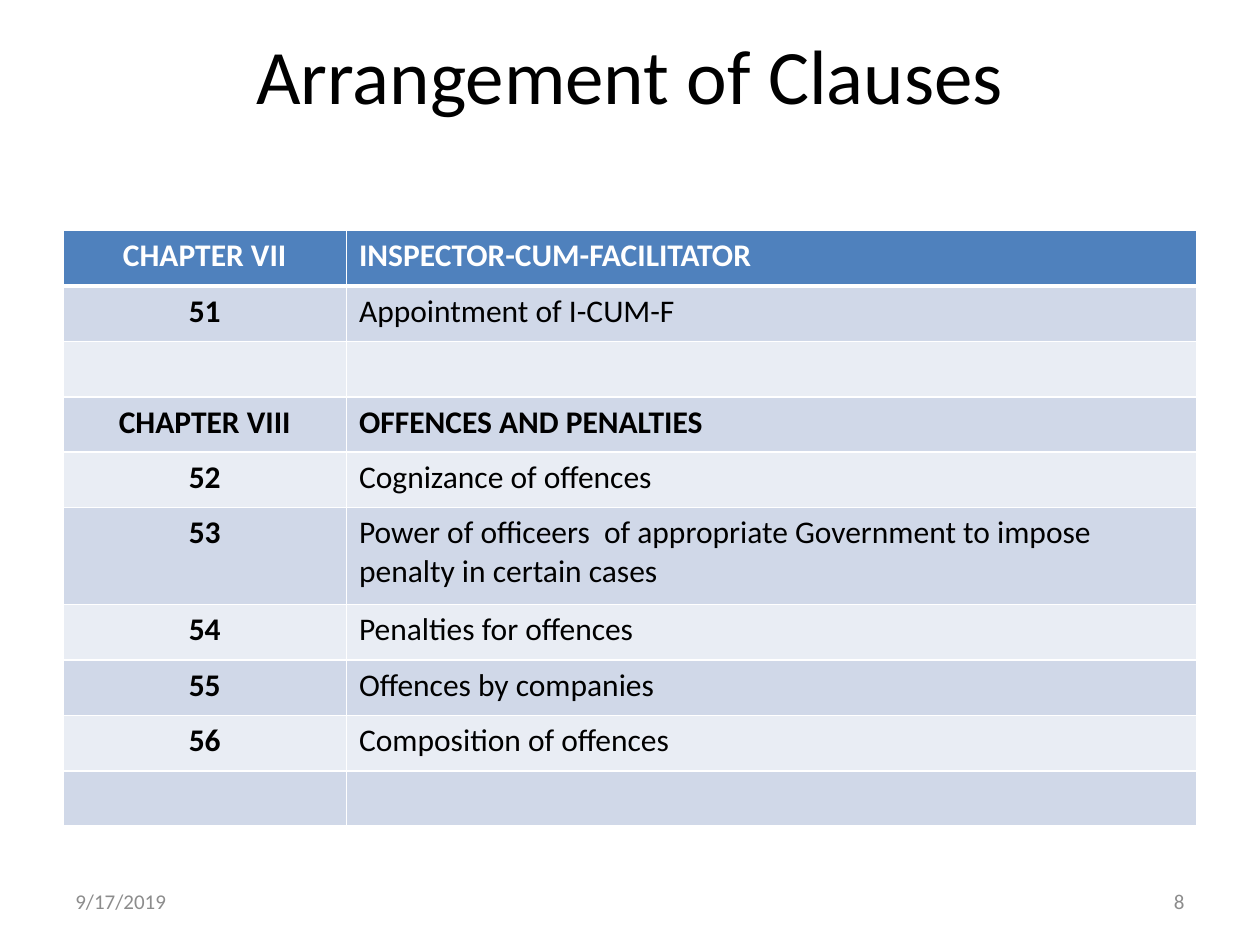
from dataclasses import dataclass

from lxml import etree
from pptx import Presentation, util as u
from pptx.dml.color import RGBColor
from pptx.enum import text
from pptx.oxml import ns


@dataclass(frozen=True)
class Theme:
    font: str = "Calibri"
    ink: str = "000000"
    paper: str = "FFFFFF"
    muted: str = "8C8C8C"
    header: str = "4F81BD"
    bands: tuple = ("D0D8E8", "E9EDF4")
    title_size: int = 44
    table_size: int = 18
    footer_size: int = 12
    thin_border: int = 1
    header_border: int = 3


THEME = Theme()
WIDTH, HEIGHT = u.Inches(10), u.Inches(7.5)
MARGIN = 0.05
CONTENT = 1 - 2 * MARGIN
FOOTER_WIDTH = 0.233
FOOTER_TOP, FOOTER_HEIGHT = 0.927, 0.053
NUMBER_SHARE = 0.25
LINE_ROW, DOUBLE_ROW = u.Inches(0.44), u.Inches(0.77)
DOUBLE_ROW_INDEX = 5

LEFT, CENTER, RIGHT = (
    text.PP_ALIGN.LEFT, text.PP_ALIGN.CENTER, text.PP_ALIGN.RIGHT)

CLAUSES = [
    ("CHAPTER VII", "INSPECTOR-CUM-FACILITATOR"),
    ("51", "Appointment of I-CUM-F"),
    ("", ""),
    ("CHAPTER VIII", "OFFENCES AND PENALTIES"),
    ("52", "Cognizance of offences"),
    ("53", "Power of officeers  of appropriate Government to impose "
           "penalty in certain cases"),
    ("54", "Penalties for offences"),
    ("55", "Offences by companies"),
    ("56", "Composition of offences"),
    ("", ""),
]


def place(left, top, width, height):
    """Turn shares of the slide's size into lengths."""
    return (int(left * WIDTH), int(top * HEIGHT),
            int(width * WIDTH), int(height * HEIGHT))


def write(frame, words, size, color, align=LEFT, bold=False):
    paragraph = frame.paragraphs[0]
    paragraph.alignment = align
    if not words:
        paragraph.font.size = u.Pt(size)
        return
    run = paragraph.add_run()
    run.text = words
    formats = {"name": THEME.font, "size": u.Pt(size), "bold": bold}
    for name, value in formats.items():
        setattr(run.font, name, value)
    run.font.color.rgb = RGBColor.from_string(color)


def add_text(slide, box, words, size, color, align=LEFT):
    frame = slide.shapes.add_textbox(*place(*box)).text_frame
    frame.word_wrap = True
    frame.vertical_anchor = text.MSO_ANCHOR.MIDDLE
    write(frame, words, size, color, align)


def set_borders(cell, **widths):
    """Draw the cell's edges; widths in points override the thin border."""
    properties = cell._tc.get_or_add_tcPr()
    for index, edge in enumerate("LRTB"):
        width = widths.get(edge, THEME.thin_border)
        line = etree.Element(ns.qn(f"a:ln{edge}"), w=str(u.Pt(width)))
        fill = etree.SubElement(line, ns.qn("a:solidFill"))
        etree.SubElement(fill, ns.qn("a:srgbClr"), val=THEME.paper)
        properties.insert(index, line)


def row_style(row):
    """Return the fill, text colour and special borders of a row."""
    if row == 0:
        return THEME.header, THEME.paper, {"B": THEME.header_border}
    borders = {"T": THEME.header_border} if row == 1 else {}
    return THEME.bands[(row - 1) % 2], THEME.ink, borders


def add_clause_table(slide):
    box = place(MARGIN, 0.244, CONTENT, 0.633)
    table = slide.shapes.add_table(len(CLAUSES), 2, *box).table
    for column, share in zip(table.columns, (NUMBER_SHARE, 1 - NUMBER_SHARE)):
        column.width = int(share * CONTENT * WIDTH)
    for index, entry in enumerate(CLAUSES):
        table.rows[index].height = (
            DOUBLE_ROW if index == DOUBLE_ROW_INDEX else LINE_ROW)
        fill, color, borders = row_style(index)
        is_chapter = entry[0].startswith("CHAPTER")
        for column, words in enumerate(entry):
            cell = table.cell(index, column)
            cell.fill.solid()
            cell.fill.fore_color.rgb = RGBColor.from_string(fill)
            set_borders(cell, **borders)
            write(cell.text_frame, words, THEME.table_size, color,
                  LEFT if column else CENTER, is_chapter or column == 0)


def add_footer(slide, left, words, align):
    add_text(slide, (left, FOOTER_TOP, FOOTER_WIDTH, FOOTER_HEIGHT), words,
             THEME.footer_size, THEME.muted, align)


def main():
    presentation = Presentation()
    presentation.slide_width, presentation.slide_height = WIDTH, HEIGHT
    slide = presentation.slides.add_slide(presentation.slide_layouts[6])
    add_text(slide, (MARGIN, 0.023, CONTENT, 0.11), "Arrangement of Clauses",
             THEME.title_size, THEME.ink, CENTER)
    add_clause_table(slide)
    add_footer(slide, MARGIN, "9/17/2019", LEFT)
    add_footer(slide, 1 - MARGIN - FOOTER_WIDTH, "8", RIGHT)
    presentation.save("out.pptx")


if __name__ == "__main__":
    main()
